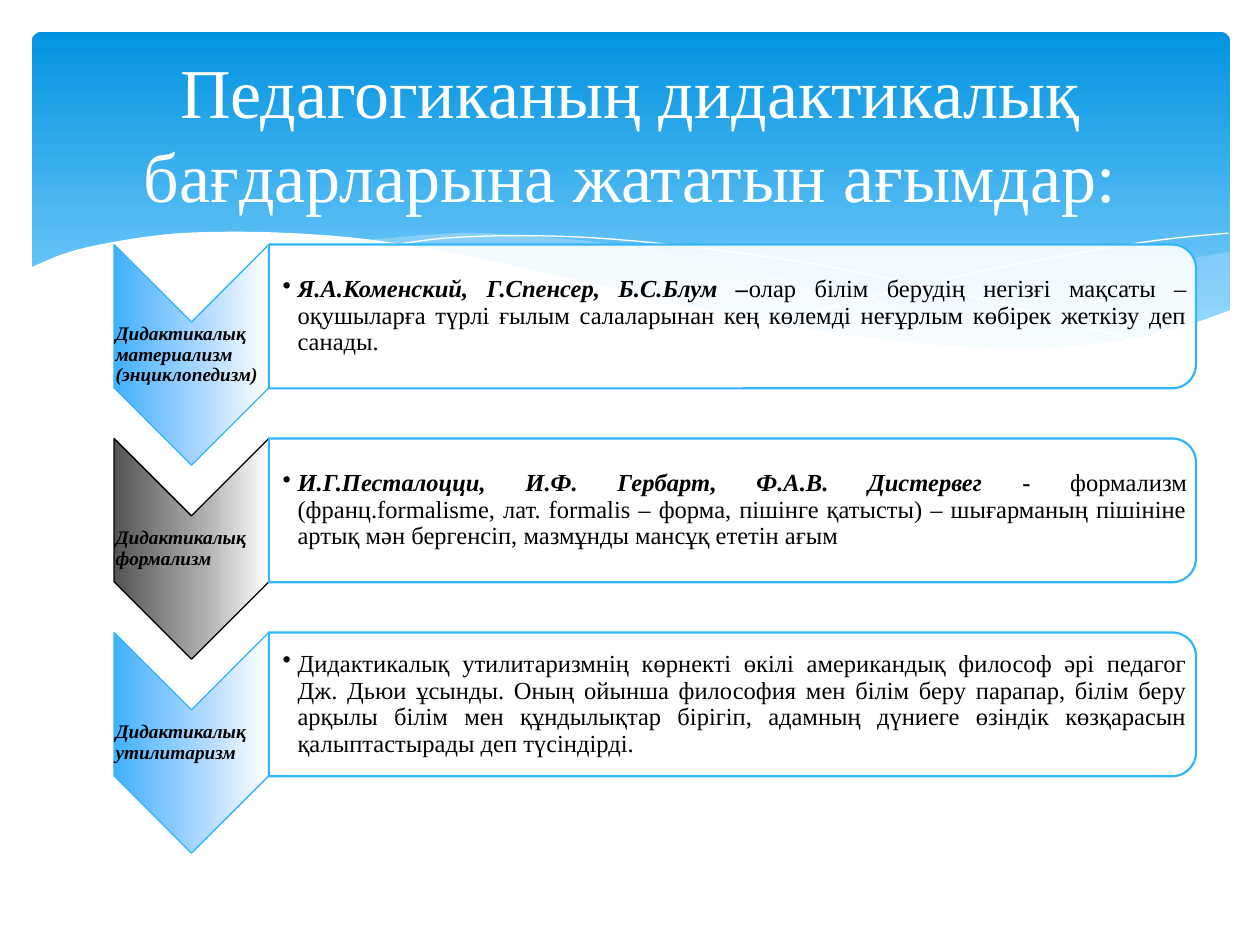
from lxml.etree import SubElement
from pptx import Presentation
from pptx.dml.color import RGBColor
from pptx.enum.shapes import MSO_SHAPE
from pptx.enum.text import MSO_ANCHOR, PP_ALIGN
from pptx.oxml.ns import qn
from pptx.util import Cm, Pt

# Content: each trend has a label and runs of (text, bold, italic)
TITLE = "Педагогиканың дидактикалық бағдарларына жататын ағымдар:"
TRENDS = [
    {"label": "Дидактикалық материализм (энциклопедизм)", "accent": "blue",
     "details": [
         ("Я.А.Коменский, Г.Спенсер, Б.С.Блум –", True, True),
         ("олар білім берудің негізғі мақсаты – оқушыларға түрлі ғылым "
          "салаларынан кең көлемді неғұрлым көбірек жеткізу деп санады.", False, False)]},
    {"label": "Дидактикалық формализм", "accent": "black",
     "details": [
         ("И.Г.Песталоцци, И.Ф. Гербарт, Ф.А.В. Дистервег", True, True),
         (" - ", True, False),
         ("формализм (франц.formalismе, лат. formalis – форма, пішінге қатысты) – "
          "шығарманың пішініне артық мән бергенсіп, мазмұнды мансұқ ететін ағым",
          False, False)]},
    {"label": "Дидактикалық утилитаризм", "accent": "blue",
     "details": [
         ("Дидактикалық утилитаризмнің көрнекті өкілі американдық философ әрі педагог "
          "Дж. Дьюи ұсынды. Оның ойынша философия мен білім беру парапар, білім беру "
          "арқылы білім мен құндылықтар бірігіп, адамның дүниеге өзіндік көзқарасын "
          "қалыптастырады деп түсіндірді.", False, False)]},
]

THEME = {
    "font": "Times New Roman",
    "title_size": 40, "label_size": 11, "detail_size": 14,
    "white": "FFFFFF", "text": "000000", "wave": "C6E7FC", "outline": "31B6FD",
    "header": [(0, "0293E0"), (90, "83D3FE")],
    "blue": {"stops": [(0, "FFFFFF"), (44, "ACD7FF"), (100, "42B0FD")], "line": "31B6FD"},
    "black": {"stops": [(0, "FFFFFF"), (44, "ABABAB"), (100, "545454")], "line": "000000"},
}

# Header waves: key points in tenths of the slide width, joined by smooth curves
UNIT = Cm(2.54)
WAVES = [
    {"curves": [[(9.76, 2), (9.35, 2.07), (8.61, 2.23), (7.53, 2.48), (6.61, 2.65)],
                [(6.61, 2.65), (7.19, 2.72), (7.69, 2.77), (8.14, 2.78), (8.63, 2.75),
                 (9.05, 2.69), (9.42, 2.59), (9.76, 2.47)]],
     "fill": "wave", "opacity": 29},
    {"curves": [[(8.93, 2.73), (8.07, 2.6), (7.06, 2.4), (6.29, 2.22), (5.55, 2.05),
                 (4.89, 1.94), (4.2, 1.87), (3.61, 1.85), (2.86, 1.91)],
                [(2.86, 1.91), (3.62, 2.03), (4.49, 2.22), (5.3, 2.4), (6.18, 2.58),
                 (6.95, 2.7), (7.61, 2.77), (8.18, 2.78), (8.93, 2.73)]],
     "fill": "wave", "opacity": 40},
    {"curves": [[(3.09, 1.95), (3.53, 1.89), (4.16, 1.87), (4.89, 1.9), (5.82, 2),
                 (6.65, 2.13), (7.6, 2.33), (8.31, 2.51), (9.07, 2.72)]]},
    {"curves": [[(6.13, 2.57), (6.95, 2.35), (7.76, 2.16), (8.66, 1.99),
                 (9.24, 1.9), (9.75, 1.85)]]},
    {"curves": [[(9.77, 2.46), (9.4, 2.59), (8.99, 2.69), (8.5, 2.75), (8.09, 2.77),
                 (7.61, 2.75), (6.88, 2.68), (6.03, 2.54), (5.29, 2.39), (4.47, 2.2),
                 (3.65, 2.02), (2.92, 1.9), (2.3, 1.85), (1.77, 1.84), (1.32, 1.86),
                 (0.85, 1.93), (0.52, 2.01), (0.23, 2.13)],
                [(0.23, 3.29), (9.77, 3.29)]],
     "fill": "white", "opacity": 100},
]

# Layout in centimetres
HEADER = (0.64, 0.64, 24.16, 6.86)
TITLE_BOX = (1.27, 0.94, 22.86, 3.48)
FIRST_TOP, ROW_STEP = 4.93, 3.91
LEFT, ARROW_W, ARROW_H = 2.3, 3.12, 4.45
PANEL_W, PANEL_H = 18.69, 2.9
LABEL_DROP, LABEL_H = 1.55, 1.35
DETAIL_DROP, DETAIL_W, DETAIL_H = 0.14, 18.54, 2.62


def paint(shape, fill=None, opacity=100, line=None, line_width=0):
    """Fill with a colour, gradient stops or nothing, and set the outline."""
    shape.shadow.inherit = False
    properties = shape._element.spPr
    if fill is None:
        shape.fill.background()
    elif isinstance(fill, str):
        shape.fill.solid()
        shape.fill.fore_color.rgb = RGBColor.from_string(fill)
        if opacity < 100:
            color = properties.find(qn("a:solidFill")).find(qn("a:srgbClr"))
            SubElement(color, qn("a:alpha"), val=str(opacity * 1000))
    else:
        shape.fill.gradient()
        shape.fill.gradient_angle = 270
        stops = properties.find(qn("a:gradFill")).find(qn("a:gsLst"))
        for stop in list(stops):
            stops.remove(stop)
        for position, color in fill:
            stop = SubElement(stops, qn("a:gs"), pos=str(position * 1000))
            SubElement(stop, qn("a:srgbClr"), val=color)
    if line:
        shape.line.color.rgb = RGBColor.from_string(line)
        shape.line.width = Pt(line_width)
    else:
        shape.line.fill.background()


def add_turned(slide, kind, left, top, width, height, **style):
    """Add a shape turned by 90 degrees that covers the given box."""
    shift = (width - height) / 2
    shape = slide.shapes.add_shape(kind, Cm(left + shift), Cm(top - shift),
                                   Cm(height), Cm(width))
    shape.rotation = 90
    paint(shape, **style)


def add_text(slide, runs, box, size, color="text", align=PP_ALIGN.JUSTIFY,
             margins=None, spacing=None, bullet=False):
    frame = slide.shapes.add_textbox(*map(Cm, box)).text_frame
    frame.word_wrap = True
    frame.vertical_anchor = MSO_ANCHOR.MIDDLE
    if margins:
        (frame.margin_left, frame.margin_top,
         frame.margin_right, frame.margin_bottom) = map(Cm, margins)
    paragraph = frame.paragraphs[0]
    paragraph.alignment = align
    if spacing:
        paragraph.line_spacing = spacing
    if bullet:
        settings = paragraph._p.get_or_add_pPr()
        settings.set("marL", str(Cm(0.3)))
        settings.set("indent", str(-Cm(0.3)))
        SubElement(settings, qn("a:buChar"), char="•")
    for text, bold, italic in runs:
        run = paragraph.add_run()
        run.text = text
        font = run.font
        font.name, font.size = THEME["font"], Pt(THEME[size])
        font.bold, font.italic = bold, italic
        font.color.rgb = RGBColor.from_string(THEME[color])


def smooth(points, steps=5):
    """Catmull-Rom curve through the points; two points stay a straight line."""
    if len(points) < 3:
        return points
    padded = [points[0], *points, points[-1]]
    curve = [points[0]]
    for a, b, c, d in zip(padded, padded[1:], padded[2:], padded[3:]):
        for step in range(1, steps + 1):
            t = step / steps
            curve.append(tuple(
                (2 * q + (r - p) * t + (2 * p - 5 * q + 4 * r - s) * t ** 2
                 + (3 * q - p - 3 * r + s) * t ** 3) / 2
                for p, q, r, s in zip(a, b, c, d)))
    return curve


def add_wave(slide, curves, fill=None, opacity=100):
    points = [(round(x * UNIT), round(y * UNIT))
              for curve in curves for x, y in smooth(curve)]
    builder = slide.shapes.build_freeform(*points[0])
    builder.add_line_segments(points[1:], close=fill is not None)
    paint(builder.convert_to_shape(), THEME[fill] if fill else None, opacity,
          line=None if fill else THEME["white"])


def main():
    deck = Presentation()
    deck.slide_width, deck.slide_height = Cm(25.4), Cm(19.05)
    slide = deck.slides.add_slide(deck.slide_layouts[6])

    # Header band, waves and title
    header = slide.shapes.add_shape(MSO_SHAPE.ROUNDED_RECTANGLE, *map(Cm, HEADER))
    header.adjustments[0] = 0.03
    paint(header, THEME["header"])
    for wave in WAVES:
        add_wave(slide, **wave)
    add_text(slide, [(TITLE, False, False)], TITLE_BOX, "title_size",
             color="white", align=PP_ALIGN.CENTER)

    # One row per trend: arrow with label, panel with details
    panel_left = LEFT + ARROW_W
    for row, trend in enumerate(TRENDS):
        top = FIRST_TOP + row * ROW_STEP
        accent = THEME[trend["accent"]]
        add_turned(slide, MSO_SHAPE.CHEVRON, LEFT, top, ARROW_W, ARROW_H,
                   fill=accent["stops"], line=accent["line"], line_width=0.75)
        add_text(slide, [(trend["label"], True, True)],
                 (LEFT, top + LABEL_DROP, ARROW_W, LABEL_H), "label_size",
                 margins=(0.03,) * 4, spacing=0.9)
        add_turned(slide, MSO_SHAPE.ROUND_2_SAME_RECTANGLE, panel_left, top,
                   PANEL_W, PANEL_H, fill=THEME["white"], opacity=90,
                   line=THEME["outline"], line_width=1.25)
        add_text(slide, trend["details"],
                 (panel_left, top + DETAIL_DROP, DETAIL_W, DETAIL_H), "detail_size",
                 margins=(0.28, 0.03, 0.03, 0.03), spacing=0.9, bullet=True)

    deck.save("out.pptx")


if __name__ == "__main__":
    main()
